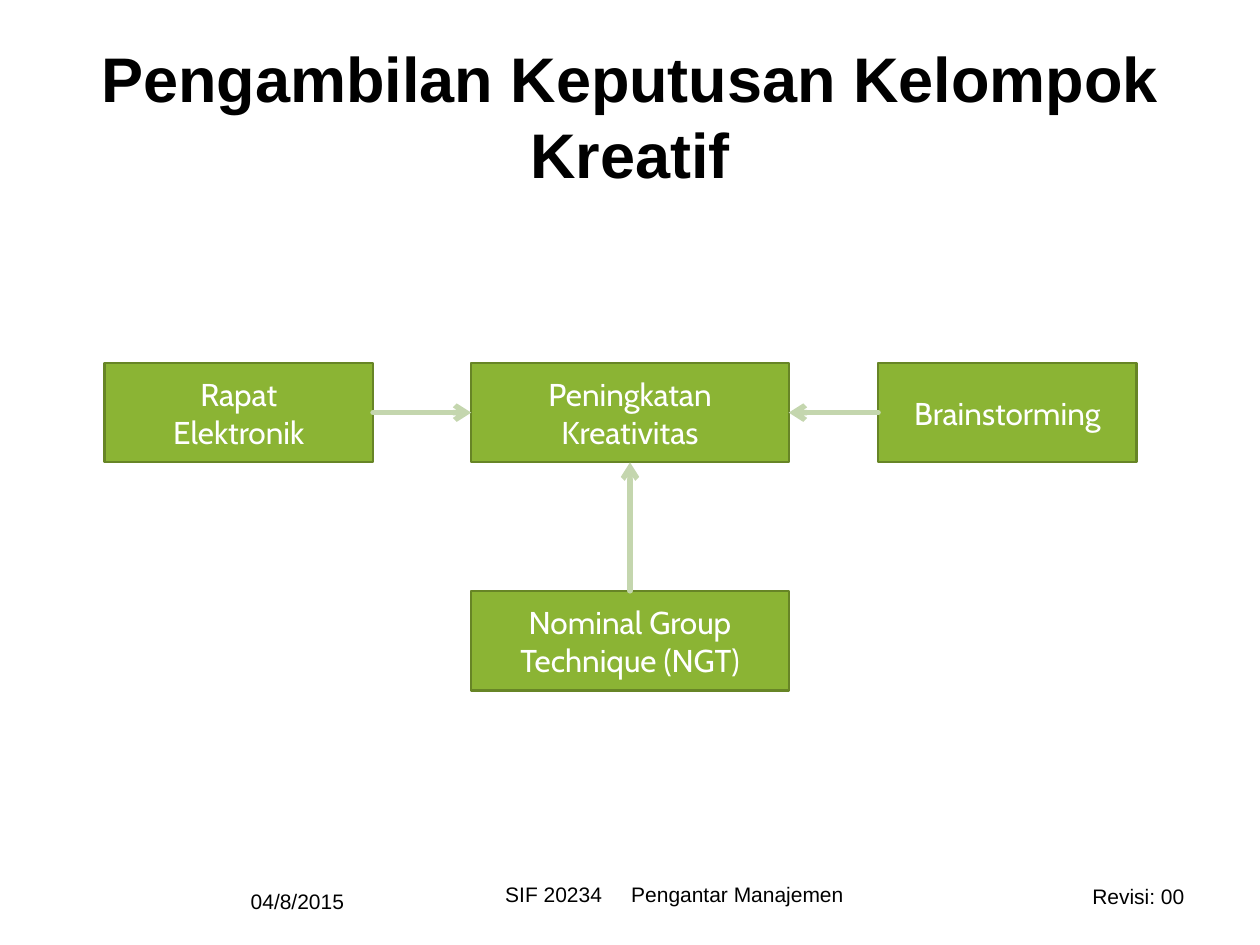
from lxml.etree import SubElement as Sub
from pptx import Presentation
from pptx.dml.color import RGBColor as RGB
from pptx.enum.shapes import MSO_CONNECTOR as Link, MSO_SHAPE as Form
from pptx.enum.text import MSO_ANCHOR as Anchor, MSO_AUTO_SIZE as Auto, PP_ALIGN as Align
from pptx.oxml.ns import qn
from pptx.util import Inches, Pt

BLACK = RGB(0x00, 0x00, 0x00)
WHITE = RGB(0xFF, 0xFF, 0xFF)
GREEN = RGB(0x8B, 0xB4, 0x34)
EDGE = RGB(0x67, 0x85, 0x26)
PALE = RGB(0xC4, 0xD6, 0xAE)
TOP, LEFT, BOTTOM, RIGHT = range(4)


def write(frame, text, size=12, font="Arial", color=BLACK, bold=False,
          align=Align.CENTER, anchor=Anchor.TOP, tab=None):
    """Fill a text frame and format each of its paragraphs."""
    frame.text = text
    frame.word_wrap = True
    frame.auto_size = Auto.NONE
    frame.vertical_anchor = anchor
    for para in frame.paragraphs:
        para.alignment = align
        if tab:
            stops = Sub(para._p.get_or_add_pPr(), qn("a:tabLst"))
            Sub(stops, qn("a:tab"), pos=str(Inches(tab)), algn="l")
        for run in para.runs:
            run.font.size = Pt(size)
            run.font.name = font
            run.font.bold = bold
            run.font.color.rgb = color


class Deck:
    """Holds the style and the current slide, on a grid of 100 columns by 75 rows."""

    font, size = "Cabin", 18

    def __init__(self):
        self.show = Presentation()
        self.show.slide_width, self.show.slide_height = Inches(10), Inches(7.5)
        self.slide = self.show.slides.add_slide(self.show.slide_layouts[5])

    def place(self, *cells):
        return [Inches(cell / 10) for cell in cells]

    def title(self, text, *cells):
        head = self.slide.shapes.title
        head.left, head.top, head.width, head.height = self.place(*cells)
        write(head.text_frame, text, size=36, bold=True, anchor=Anchor.MIDDLE)

    def label(self, text, *cells, inset=0.1, **style):
        frame = self.slide.shapes.add_textbox(*self.place(*cells)).text_frame
        frame.margin_left = Inches(inset)
        write(frame, text, **style)

    def box(self, text, col, row, wide, high=7.9):
        shape = self.slide.shapes.add_shape(
            Form.RECTANGLE, *self.place(col, row, wide, high))
        shape.shadow.inherit = False
        shape.fill.solid()
        shape.fill.fore_color.rgb = GREEN
        shape.line.color.rgb = EDGE
        shape.line.width = Pt(1.25)
        write(shape.text_frame, text, size=self.size, font=self.font,
              color=WHITE, anchor=Anchor.MIDDLE)
        return shape

    def arrow(self, start, out, end, into):
        line = self.slide.shapes.add_connector(Link.STRAIGHT, 0, 0, 0, 0)
        line.begin_connect(start, out)
        line.end_connect(end, into)
        line.line.color.rgb = PALE
        line.line.width = Pt(3)
        stroke = line.line._get_or_add_ln()
        stroke.set("cap", "rnd")
        Sub(stroke, qn("a:tailEnd"), type="arrow")
        Sub(line._element.spPr, qn("a:effectLst"))


def main():
    deck = Deck()
    deck.title("Pengambilan Keputusan Kelompok Kreatif", 5, 2.9, 90, 12.5)

    upper, lower = 28.8, 46.9
    meet = deck.box("Rapat\nElektronik", 8.3, upper, 21.3)
    goal = deck.box("Peningkatan\nKreativitas", 37.4, upper, 25.2)
    storm = deck.box("Brainstorming", 69.7, upper, 20.5)
    group = deck.box("Nominal Group\nTechnique (NGT)", 37.4, lower, 25.2)

    deck.arrow(meet, RIGHT, goal, LEFT)
    deck.arrow(storm, LEFT, goal, RIGHT)
    deck.arrow(group, TOP, goal, BOTTOM)

    deck.label("04/8/2015", 5, 69.5, 23.3, 4, align=Align.RIGHT, anchor=Anchor.MIDDLE)
    deck.label("SIF 20234\tPengantar Manajemen", 26.4, 69.5, 54.4, 4.2,
               inset=1.37, align=Align.LEFT, tab=1)
    deck.label("Revisi: 00", 71.7, 69.6, 23.3, 3, align=Align.RIGHT)
    deck.show.save("out.pptx")


if __name__ == "__main__":
    main()
